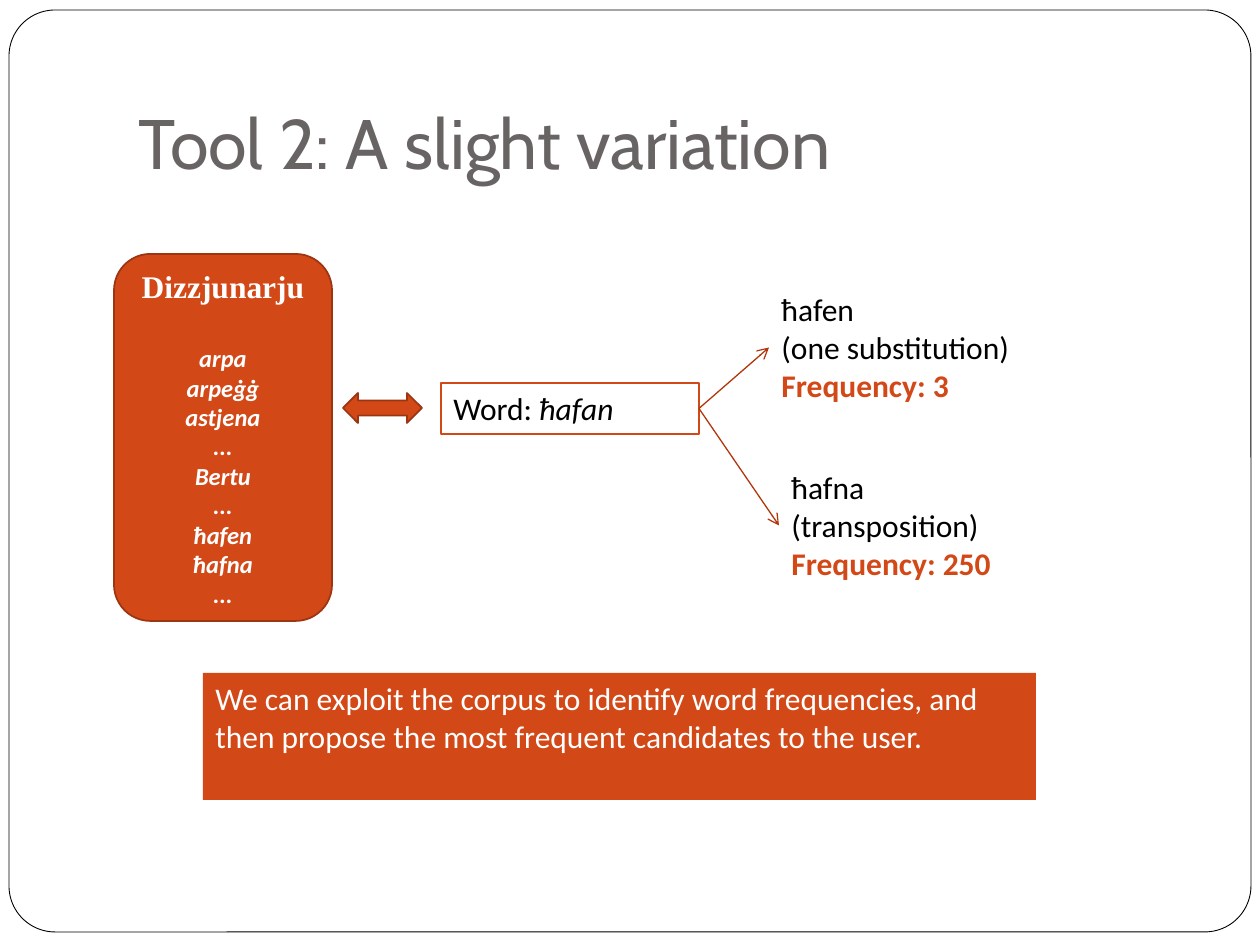
from lxml import etree
from pptx import Presentation
from pptx.dml.color import RGBColor
from pptx.enum.shapes import MSO_CONNECTOR, MSO_SHAPE
from pptx.enum.text import MSO_ANCHOR, PP_ALIGN
from pptx.oxml.ns import qn
from pptx.util import Emu, Pt

PX = 914400 / 126
RECT, ROUND = MSO_SHAPE.RECTANGLE, MSO_SHAPE.ROUNDED_RECTANGLE
DOUBLE_ARROW = MSO_SHAPE.LEFT_RIGHT_ARROW
STRAIGHT = MSO_CONNECTOR.STRAIGHT
TOP, MIDDLE, BOTTOM = MSO_ANCHOR.TOP, MSO_ANCHOR.MIDDLE, MSO_ANCHOR.BOTTOM
CENTER = PP_ALIGN.CENTER
RIGHT_SIDE, LEFT_SIDE = 3, 1
COLORS = {
    "white": "FFFFFF", "black": "000000", "title": "696464",
    "accent": "D34817", "outline": "9C3511", "arrow": "B1360B",
}
ENTRIES = ["arpa", "arpeġġ", "astjena", "...", "Bertu", "...", "ħafen", "ħafna", "..."]
CANDIDATES = [
    ((769, 284, 256, 127), ["ħafen", "(one substitution)", "Frequency: 3"]),
    ((779, 462, 227, 127), ["ħafna", "(transposition)", "Frequency: 250"]),
]


def px(n):
    return Emu(round(n * PX))


def rgb(name):
    return RGBColor.from_string(COLORS[name])


def style(r, size=18, color="black", font="Calibri", bold=False, italic=False):
    r.font.size = Pt(size)
    r.font.name = font
    r.font.color.rgb = rgb(color)
    r.font.bold = bold
    r.font.italic = italic


def add_box(s, kind, box, fill=None, line=None, width=1):
    sp = s.shapes.add_shape(kind, *map(px, box))
    sp.shadow.inherit = False
    if fill:
        sp.fill.solid()
        sp.fill.fore_color.rgb = rgb(fill)
    else:
        sp.fill.background()
    if line:
        sp.line.color.rgb = rgb(line)
        sp.line.width = Pt(width)
    else:
        sp.line.fill.background()
    return sp


def set_lines(sp, lines, anchor=TOP, align=PP_ALIGN.LEFT, wrap=True, **font):
    tf = sp.text_frame
    tf.word_wrap = wrap
    tf.vertical_anchor = anchor
    tf.text = "\n".join(lines)
    for p in tf.paragraphs:
        p.alignment = align
        for r in p.runs:
            style(r, **font)
    return tf


def add_title(s, text):
    sp = s.shapes.add_textbox(*map(px, (126, 38, 1071, 158)))
    tf = set_lines(sp, [text], BOTTOM, size=40, color="title", font="Cabin")
    tf.margin_bottom = px(13)


def add_dictionary(s):
    sp = add_box(s, ROUND, (114, 254, 218, 367), "accent", "outline")
    tf = set_lines(sp, ["Dizzjunarju"] + ENTRIES, MIDDLE, CENTER,
                   size=14, color="white", bold=True, italic=True)
    heading = tf.paragraphs[0]
    heading.space_after = Pt(22)
    style(heading.runs[0], color="white", font="Times New Roman", bold=True)


def add_word(s):
    sp = add_box(s, RECT, (441, 383, 258, 51), line="accent", width=0.75)
    tf = set_lines(sp, ["Word: "])
    r = tf.paragraphs[0].add_run()
    r.text = "ħafan"
    style(r, italic=True)
    return sp


def add_candidate(s, box, lines):
    sp = s.shapes.add_textbox(*map(px, box))
    tf = set_lines(sp, lines, wrap=False)
    style(tf.paragraphs[-1].runs[0], color="accent", bold=True)
    return sp


def add_arrow(s, start, end):
    c = s.shapes.add_connector(STRAIGHT, 0, 0, 0, 0)
    c.begin_connect(start, RIGHT_SIDE)
    c.end_connect(end, LEFT_SIDE)
    c.line.color.rgb = rgb("arrow")
    c.line.width = Pt(0.75)
    etree.SubElement(c.line._get_or_add_ln(), qn("a:tailEnd"), type="arrow")
    etree.SubElement(c._element.spPr, qn("a:effectLst"))


def main():
    prs = Presentation()
    prs.slide_width, prs.slide_height = px(1260), px(945)
    s = prs.slides.add_slide(prs.slide_layouts[6])
    frame = add_box(s, ROUND, (9, 10, 1242, 922), "white", "black", 0.5)
    frame.adjustments[0] = 0.05
    add_title(s, "Tool 2: A slight variation")
    add_dictionary(s)
    word = add_word(s)
    add_box(s, DOUBLE_ARROW, (343, 393, 79, 30), "accent", "outline")
    for box, lines in CANDIDATES:
        add_arrow(s, word, add_candidate(s, box, lines))
    banner = add_box(s, RECT, (203, 673, 833, 127), "accent")
    set_lines(banner, ["We can exploit the corpus to identify word frequencies, and "
                       "then propose the most frequent candidates to the user."],
              color="white")
    prs.save("out.pptx")


if __name__ == "__main__":
    main()
